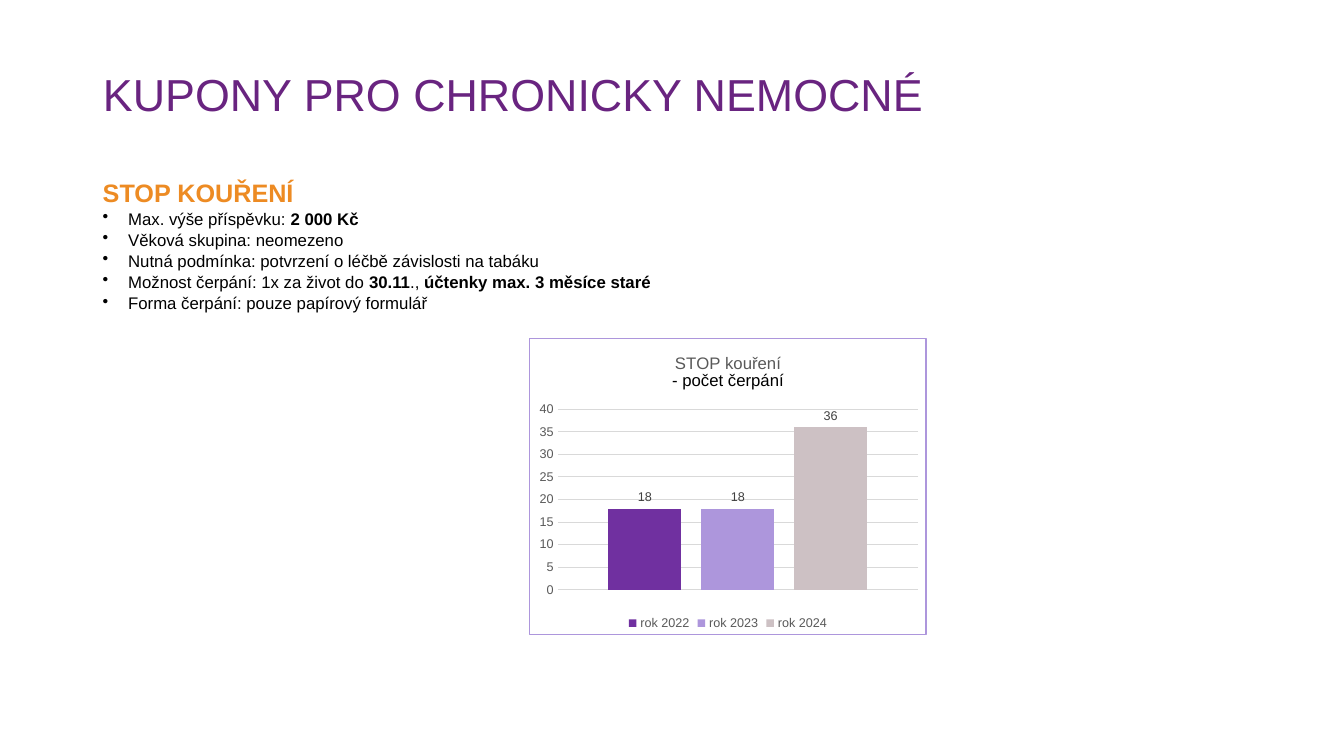
import pptx
import pptx.chart.data
import pptx.dml.color
import pptx.enum.chart
import pptx.enum.text
import pptx.oxml
import pptx.oxml.ns
import pptx.util
from dataclasses import dataclass
from lxml import etree

Cm, Pt = pptx.util.Cm, pptx.util.Pt


@dataclass(frozen=True)
class Theme:
    face: str = "Arial"
    plum: str = "692480"
    orange: str = "ED8B23"
    black: str = "000000"
    grey: str = "595959"
    dark: str = "404040"
    grid: str = "D9D9D9"
    edge: str = "AD96DC"
    title: int = 32
    head: int = 18
    body: int = 12
    small: int = 9


THEME = Theme()

FACTS = [
    [("Max. výše příspěvku: ", False), ("2\u00a0000 Kč", True)],
    [("Věková skupina: neomezeno", False)],
    [("Nutná podmínka: potvrzení o léčbě závislosti na tabáku", False)],
    [("Možnost čerpání: 1x za život do ", False), ("30.11", True),
     ("., ", False), ("účtenky max. 3 měsíce staré", True)],
    [("Forma čerpání: pouze papírový formulář", False)],
]
YEARS = [("rok 2022", 18, "7030A0"), ("rok 2023", 18, "AD96DC"),
         ("rok 2024", 36, "CDC1C4")]


def tint(hue):
    return pptx.dml.color.RGBColor.from_string(hue)


def style(font, size, hue, bold=False):
    font.name, font.size, font.bold = THEME.face, Pt(size), bold
    font.color.rgb = tint(hue)


def add_run(para, text, size, hue, bold=False):
    run = para.add_run()
    run.text = text
    style(run.font, size, hue, bold)


def add_title(slide, box):
    title = slide.shapes.title
    title.left, title.top, title.width, title.height = box
    frame = title.text_frame
    frame.auto_size = pptx.enum.text.MSO_AUTO_SIZE.NONE
    frame.vertical_anchor = pptx.enum.text.MSO_ANCHOR.MIDDLE
    para = frame.paragraphs[0]
    para.alignment = pptx.enum.text.PP_ALIGN.LEFT
    para.line_spacing = 0.9
    add_run(para, "KUPONY PRO CHRONICKY NEMOCNÉ", THEME.title, THEME.plum)


def add_facts(slide, box):
    frame = slide.shapes.add_textbox(*box).text_frame
    frame.word_wrap = True
    add_run(frame.paragraphs[0], "STOP KOUŘENÍ", THEME.head, THEME.orange, True)
    for fact in FACTS:
        para = frame.add_paragraph()
        para.line_spacing = 1.05
        props = para._p.get_or_add_pPr()
        props.set("marL", str(Cm(0.64)))
        props.set("indent", str(-Cm(0.64)))
        etree.SubElement(props, pptx.oxml.ns.qn("a:buChar"), char="•")
        for text, bold in fact:
            add_run(para, text, THEME.body, THEME.black, bold)


def add_frame(chart):
    """Give the chart area a white fill and a thin border."""
    area = pptx.oxml.parse_xml(
        f'<c:spPr {pptx.oxml.ns.nsdecls("c", "a")}>'
        '<a:solidFill><a:srgbClr val="FFFFFF"/></a:solidFill>'
        f'<a:ln w="{Pt(0.75)}"><a:solidFill><a:srgbClr val="{THEME.edge}"/>'
        '</a:solidFill></a:ln></c:spPr>')
    chart.element.find(pptx.oxml.ns.qn("c:chart")).addnext(area)


def place_plot(chart, x, y, w, h):
    """Fix the inner plot area, in fractions of the chart."""
    plot = chart.element.find(".//" + pptx.oxml.ns.qn("c:plotArea"))
    for old in plot.findall(pptx.oxml.ns.qn("c:layout")):
        plot.remove(old)
    sizes = "".join(f'<c:{tag} val="{val}"/>'
                    for tag, val in zip("xywh", (x, y, w, h)))
    plot.insert(0, pptx.oxml.parse_xml(
        f'<c:layout {pptx.oxml.ns.nsdecls("c")}><c:manualLayout>'
        '<c:layoutTarget val="inner"/><c:xMode val="edge"/>'
        f'<c:yMode val="edge"/>{sizes}</c:manualLayout></c:layout>'))


def add_graph(slide, box):
    kinds = pptx.enum.chart
    data = pptx.chart.data.CategoryChartData(number_format="#,##0")
    data.categories = ["1"]
    for name, count, _ in YEARS:
        data.add_series(name, [count])
    chart = slide.shapes.add_chart(
        kinds.XL_CHART_TYPE.COLUMN_CLUSTERED, *box, data).chart
    style(chart.font, 10, THEME.black)
    add_frame(chart)
    place_plot(chart, 0.07, 0.24, 0.91, 0.61)

    # Chart title
    frame = chart.chart_title.text_frame
    lines = [("STOP kouření", THEME.grey), ("- počet čerpání", THEME.black)]
    for num, (text, hue) in enumerate(lines):
        para = frame.add_paragraph() if num else frame.paragraphs[0]
        para.alignment = pptx.enum.text.PP_ALIGN.LEFT
        add_run(para, text, THEME.body, hue)

    # Columns and labels
    plot = chart.plots[0]
    plot.gap_width, plot.overlap = 139, -27
    plot.vary_by_categories = False
    for series, (_, _, hue) in zip(plot.series, YEARS):
        series.format.fill.solid()
        series.format.fill.fore_color.rgb = tint(hue)
        labels = series.data_labels
        labels.show_value = True
        labels.number_format, labels.number_format_is_linked = "#,##0", False
        labels.position = kinds.XL_LABEL_POSITION.OUTSIDE_END
        style(labels.font, THEME.small, THEME.dark)

    # Axes
    chart.category_axis.visible = False
    axis = chart.value_axis
    axis.minimum_scale, axis.maximum_scale, axis.major_unit = 0, 40, 5
    axis.major_tick_mark = axis.minor_tick_mark = kinds.XL_TICK_MARK.NONE
    axis.format.line.fill.background()
    grid = axis.major_gridlines.format.line
    grid.width, grid.color.rgb = Pt(0.75), tint(THEME.grid)
    axis.tick_labels.number_format = "#,##0"
    axis.tick_labels.number_format_is_linked = False
    style(axis.tick_labels.font, THEME.small, THEME.grey)

    # Legend
    chart.has_legend = True
    chart.legend.position = kinds.XL_LEGEND_POSITION.BOTTOM
    chart.legend.include_in_layout = False
    style(chart.legend.font, THEME.small, THEME.grey)


def main():
    deck = pptx.Presentation()
    deck.slide_width, deck.slide_height = Cm(33.87), Cm(19.05)
    slide = deck.slides.add_slide(deck.slide_layouts[5])
    left = Cm(2.34)
    add_title(slide, (left, Cm(1.4), Cm(24.92), Cm(2.11)))
    add_facts(slide, (left, Cm(4.34), Cm(22.71), Cm(13.51)))
    add_graph(slide, (Cm(13.34), Cm(8.51), Cm(10.01), Cm(7.49)))
    deck.save("out.pptx")


if __name__ == "__main__":
    main()
